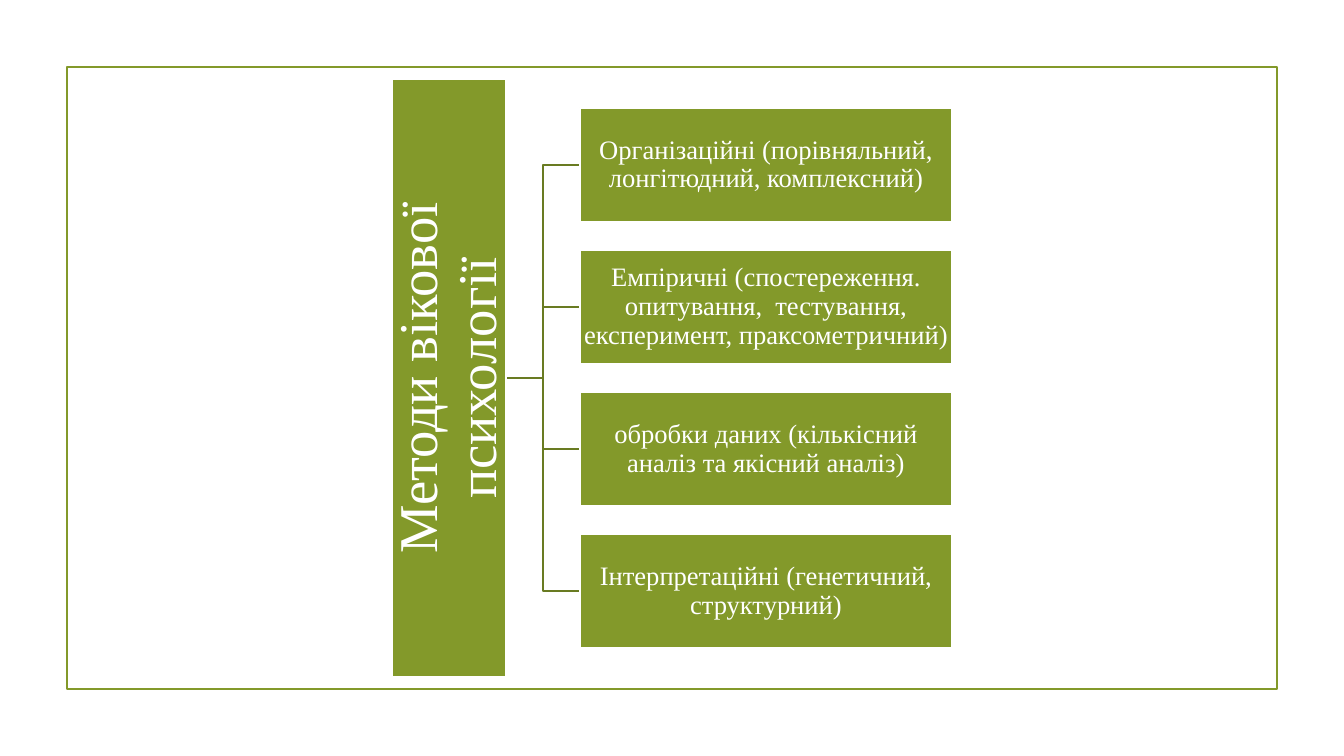
from pptx import Presentation
from pptx.dml.color import RGBColor
from pptx.enum.shapes import MSO_SHAPE as Shape
from pptx.enum.text import MSO_ANCHOR as Anchor, PP_ALIGN as Align
from pptx.util import Pt

EMU_PER_PX = 914400 / 100.8
OLIVE = RGBColor(0x83, 0x99, 0x2A)
DARK_OLIVE = RGBColor(0x69, 0x7B, 0x22)
WHITE = RGBColor(0xFF, 0xFF, 0xFF)
FONT = "Times New Roman"

TITLE = "Методи вікової психології"
METHODS = [
    "Організаційні (порівняльний, лонгітюдний, комплексний)",
    "Емпіричні (спостереження. опитування,  тестування, експеримент, праксометричний)",
    "обробки даних (кількісний аналіз та якісний аналіз)",
    "Інтерпретаційні (генетичний, структурний)",
]


def px(length):
    return round(length * EMU_PER_PX)


def style_outline(shape, color):
    shape.shadow.inherit = False
    shape.line.color.rgb = color
    shape.line.width = Pt(1.25)


def add_frame(slide, left, top, width, height):
    frame = slide.shapes.add_shape(
        Shape.RECTANGLE, px(left), px(top), px(width), px(height))
    frame.fill.background()
    style_outline(frame, OLIVE)


def add_box(slide, left, top, width, height, text, size, inset):
    box = slide.shapes.add_shape(
        Shape.RECTANGLE, px(left), px(top), px(width), px(height))
    box.fill.solid()
    box.fill.fore_color.rgb = OLIVE
    style_outline(box, WHITE)
    text_frame = box.text_frame
    text_frame.word_wrap = True
    text_frame.vertical_anchor = Anchor.MIDDLE
    text_frame.margin_left = text_frame.margin_right = px(inset)
    text_frame.margin_top = text_frame.margin_bottom = px(inset)
    paragraph = text_frame.paragraphs[0]
    paragraph.text = text
    paragraph.alignment = Align.CENTER
    paragraph.line_spacing = 0.9
    paragraph.font.name = FONT
    paragraph.font.size = Pt(size)
    paragraph.font.color.rgb = WHITE
    return box


def add_branch(slide, start_x, start_y, end_x, end_y):
    """Draw a right-angled line that turns halfway across."""
    middle_x = (start_x + end_x) / 2
    builder = slide.shapes.build_freeform(start_x, start_y, scale=EMU_PER_PX)
    builder.add_line_segments(
        [(middle_x, start_y), (middle_x, end_y), (end_x, end_y)], close=False)
    branch = builder.convert_to_shape()
    branch.fill.background()
    style_outline(branch, DARK_OLIVE)


def add_hierarchy(slide, left, top, width, height):
    """Place a vertical title bar and the methods that branch from it."""
    thickness, box_width, gap = 114, 372, 28
    center_y = top + height / 2
    box_left = left + width - box_width
    pitch = thickness + gap
    first_y = center_y - pitch * (len(METHODS) - 1) / 2
    centers = [first_y + pitch * index for index in range(len(METHODS))]

    for box_center in centers:
        add_branch(slide, left + thickness, center_y, box_left, box_center)
    title_bar = add_box(slide, left + (thickness - height) / 2,
                        center_y - thickness / 2, height, thickness,
                        TITLE, size=39, inset=3)
    title_bar.rotation = 270
    for method, box_center in zip(METHODS, centers):
        add_box(slide, box_left, box_center - thickness / 2, box_width,
                thickness, method, size=19, inset=1)


def main():
    presentation = Presentation()
    presentation.slide_width, presentation.slide_height = px(1344), px(756)
    slide = presentation.slides.add_slide(presentation.slide_layouts[6])
    add_frame(slide, 67, 67, 1210, 622)
    add_hierarchy(slide, 392, 79, 560, 598)
    presentation.save("out.pptx")


if __name__ == "__main__":
    main()
